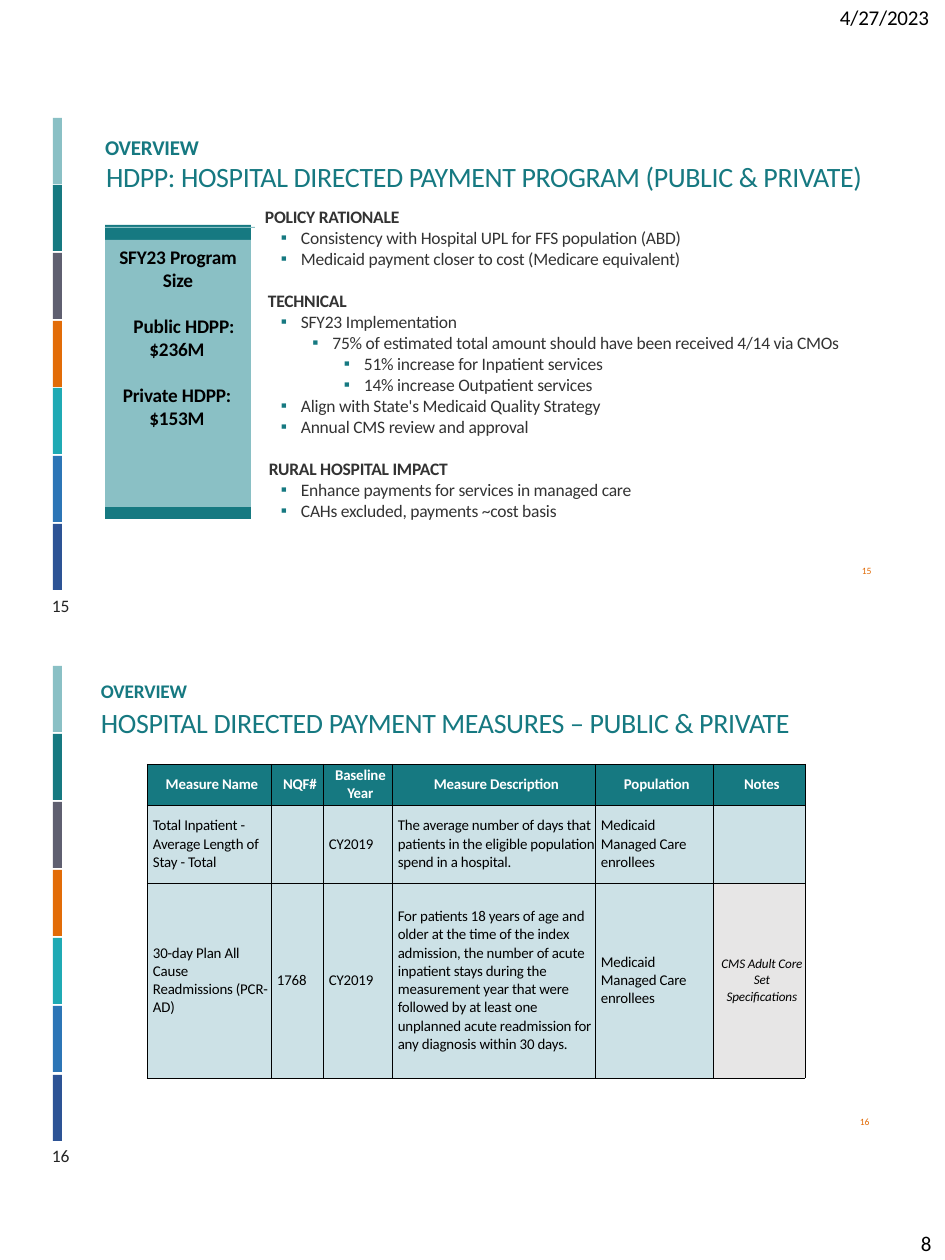
from lxml import etree
from pptx import Presentation
from pptx import util as u
from pptx.dml.color import RGBColor
from pptx.enum import shapes, text
from pptx.oxml.ns import qn

PX = u.Inches(1) / 126

BLACK = RGBColor(0x00, 0x00, 0x00)
WHITE = RGBColor(0xFF, 0xFF, 0xFF)
INK = RGBColor(0x33, 0x33, 0x33)
DARK = RGBColor(0x24, 0x24, 0x24)
TEAL = RGBColor(0x16, 0x79, 0x81)
MIST = RGBColor(0x8A, 0xC0, 0xC5)
SLATE = RGBColor(0x5F, 0x5F, 0x70)
ORANGE = RGBColor(0xE2, 0x6C, 0x08)
AQUA = RGBColor(0x1F, 0xAA, 0xB4)
BLUE = RGBColor(0x2C, 0x75, 0xB6)
NAVY = RGBColor(0x2D, 0x53, 0x95)
PALE = RGBColor(0xCC, 0xE1, 0xE6)
GREY = RGBColor(0xE7, 0xE6, 0xE6)

STRIPES = (MIST, TEAL, SLATE, ORANGE, AQUA, BLUE, NAVY)
CENTER = text.PP_ALIGN.CENTER


def px(length):
    return u.Emu(round(length * PX))


class Handout:
    font_name = "Calibri"

    def __init__(self, page):
        self.page = page

    def paragraph(self, frame, words, size, color=BLACK, bold=False, italic=False,
                  align=None, before=0, line=None, spacing=-10, left=0, right=0):
        """Add a paragraph, using the first one if it is still free."""
        para = frame.paragraphs[0]
        if para.text:
            para = frame.add_paragraph()
        para.text = words
        para.alignment = align
        para.space_before = u.Pt(before)
        if line:
            para.line_spacing = u.Pt(line)
        font = para.font
        font.name, font.size = self.font_name, u.Pt(size)
        font.bold, font.italic = bold, italic
        font.color.rgb = color
        props = para._p.get_or_add_pPr()
        props.set("marL", str(px(left)))
        props.set("marR", str(px(right)))
        props.get_or_add_defRPr().set("spc", str(spacing))
        return para

    def bullet(self, para):
        props = para._p.get_or_add_pPr()
        props.set("indent", str(px(-20)))
        color = etree.Element(qn("a:buClr"))
        etree.SubElement(color, qn("a:srgbClr"), val=str(TEAL))
        marks = [color,
                 etree.Element(qn("a:buFont"), typeface="Arial"),
                 etree.Element(qn("a:buChar"), char="▪")]
        for mark in marks:
            props.find(qn("a:defRPr")).addprevious(mark)

    def frame(self, shape, top=1):
        frame = shape.text_frame
        frame.word_wrap = True
        frame.vertical_anchor = text.MSO_ANCHOR.TOP
        frame.margin_left = frame.margin_right = frame.margin_bottom = 0
        frame.margin_top = px(top)
        return frame

    def text_box(self, left, top, width, height, inset=1):
        box = self.page.shapes.add_textbox(*map(px, (left, top, width, height)))
        return self.frame(box, inset)

    def label(self, left, top, width, height, words, size, color, before=1):
        self.paragraph(self.text_box(left, top, width, height), words, size, color,
                       before=before)

    def bar(self, left, top, width, height, color):
        bar = self.page.shapes.add_shape(shapes.MSO_SHAPE.RECTANGLE,
                                         *map(px, (left, top, width, height)))
        bar.shadow.inherit = False
        bar.fill.solid()
        bar.fill.fore_color.rgb = color
        bar.line.fill.background()
        return bar

    def stripes(self, first, last):
        for i, color in enumerate(STRIPES):
            self.bar(53, first + (last - first) * i // 6, 9, 66, color)

    def section(self, left, top, width, height, heading, items, indent, base):
        frame = self.text_box(left, top, width, height)
        self.paragraph(frame, heading, 10, INK, bold=True, before=0.9, left=indent)
        for level, words in items:
            para = self.paragraph(frame, words, 10, INK, left=base + 31.5 * level)
            para.level = level
            self.bullet(para)

    def cell(self, cell, words, fill, size=8.5, color=BLACK, bold=False,
             italic=False, align=None):
        cell.fill.solid()
        cell.fill.fore_color.rgb = fill
        cell.vertical_anchor = text.MSO_ANCHOR.MIDDLE
        cell.margin_left = px(6)
        cell.margin_right = cell.margin_top = cell.margin_bottom = 0
        self.paragraph(cell.text_frame, words, size, color, bold, italic, align)
        props = cell._tc.get_or_add_tcPr()
        for i, side in enumerate(("lnL", "lnR", "lnT", "lnB")):
            edge = etree.Element(qn("a:" + side), w=str(u.Pt(0.25)))
            solid = etree.SubElement(edge, qn("a:solidFill"))
            etree.SubElement(solid, qn("a:srgbClr"), val=str(BLACK))
            props.insert(i, edge)

    def table(self, left, top, columns, heights, rows):
        table = self.page.shapes.add_table(
            len(heights), len(columns),
            *map(px, (left, top, sum(columns), sum(heights)))).table
        table.first_row = table.horz_banding = False
        for column, width in zip(table.columns, columns):
            column.width = px(width)
        for row, height in zip(table.rows, heights):
            row.height = px(height)
        for r, row in enumerate(rows):
            for c, words in enumerate(row):
                cell = table.cell(r, c)
                if r == 0:
                    self.cell(cell, words, TEAL, color=WHITE, bold=True, align=CENTER)
                elif words and c == 5:
                    self.cell(cell, words, GREY, 7.5, italic=True, align=CENTER)
                else:
                    self.cell(cell, words, PALE)


def main():
    deck = Presentation()
    deck.slide_width, deck.slide_height = px(945), px(1260)
    handout = Handout(deck.slides.add_slide(deck.slide_layouts[6]))

    # Page date and number
    handout.label(840, 4, 98, 29, "4/27/2023", 12, BLACK)
    handout.label(921, 1230, 22, 24, "8", 12, BLACK, before=0)

    # Colour stripes and slide numbers
    handout.stripes(118, 524)
    handout.stripes(666, 1075)
    handout.label(862, 564, 14, 15, "15", 5.5, ORANGE)
    handout.label(52, 594, 20, 24, "15", 10, DARK)
    handout.label(860, 1115, 14, 15, "16", 5.5, ORANGE)
    handout.label(52, 1144, 20, 24, "16", 10, DARK)

    # Upper slide: title
    title = handout.text_box(104, 134, 775, 62)
    handout.paragraph(title, "OVERVIEW", 12, TEAL, bold=True, before=1, line=14.2, left=1)
    handout.paragraph(title, "HDPP: HOSPITAL DIRECTED PAYMENT PROGRAM (PUBLIC & PRIVATE)",
                      16, TEAL, line=18.9, spacing=-20, left=2)

    # Upper slide: program size panel
    handout.bar(105, 507, 146, 12, TEAL)
    handout.bar(105, 225, 146, 15, TEAL)
    panel = handout.frame(handout.bar(105, 240, 146, 267, MIST), 5)
    for words, before, left, right in (("SFY23 Program Size", 2.9, 13, 13),
                                       ("Public HDPP:", 13.1, 12, 0),
                                       ("$236M", 0, 0, 2),
                                       ("Private HDPP:", 13.1, 0, 2),
                                       ("$153M", 0, 0, 2)):
        handout.paragraph(panel, words, 11, bold=True, align=CENTER, before=before,
                          line=13.2, left=left, right=right)
    handout.bar(105, 227, 150, 1, MIST)

    # Upper slide: bullet sections
    handout.section(263, 205, 427, 67, "POLICY RATIONALE", (
        (0, "Consistency with Hospital UPL for FFS population (ABD)"),
        (0, "Medicaid payment closer to cost (Medicare equivalent)"),
    ), 2, 38)
    handout.section(267, 289, 590, 151, "TECHNICAL", (
        (0, "SFY23 Implementation"),
        (1, "75% of estimated total amount should have been received 4/14 via CMOs"),
        (2, "51% increase for Inpatient services"),
        (2, "14% increase Outpatient services"),
        (0, "Align with State's Medicaid Quality Strategy"),
        (0, "Annual CMS review and approval"),
    ), 1, 34)
    handout.section(103, 457, 537, 67, "RURAL HOSPITAL IMPACT", (
        (0, "Enhance payments for services in managed care"),
        (0, "CAHs excluded, payments ~cost basis"),
    ), 166, 198)

    # Lower slide: title
    title = handout.text_box(99, 675, 720, 66, 4)
    handout.paragraph(title, "OVERVIEW", 11, TEAL, bold=True, before=2.3, left=2)
    handout.paragraph(title, "HOSPITAL DIRECTED PAYMENT MEASURES – PUBLIC & PRIVATE",
                      16, TEAL, before=1.9, spacing=-20, left=2)

    # Lower slide: measures table
    handout.table(147, 764, (124, 52, 69, 203, 118, 92), (41, 78, 195), (
        ("Measure Name", "NQF#", "Baseline Year", "Measure Description",
         "Population", "Notes"),
        ("Total Inpatient - Average Length of Stay - Total", "", "CY2019",
         "The average number of days that patients in the eligible population "
         "spend in a hospital.", "Medicaid Managed Care enrollees", ""),
        ("30-day Plan All Cause Readmissions (PCR-AD)", "1768", "CY2019",
         "For patients 18 years of age and older at the time of the index admission, "
         "the number of acute inpatient stays during the measurement year that were "
         "followed by at least one unplanned acute readmission for any diagnosis "
         "within 30 days.", "Medicaid Managed Care enrollees",
         "CMS Adult Core Set Specifications"),
    ))

    deck.save("out.pptx")


if __name__ == "__main__":
    main()
